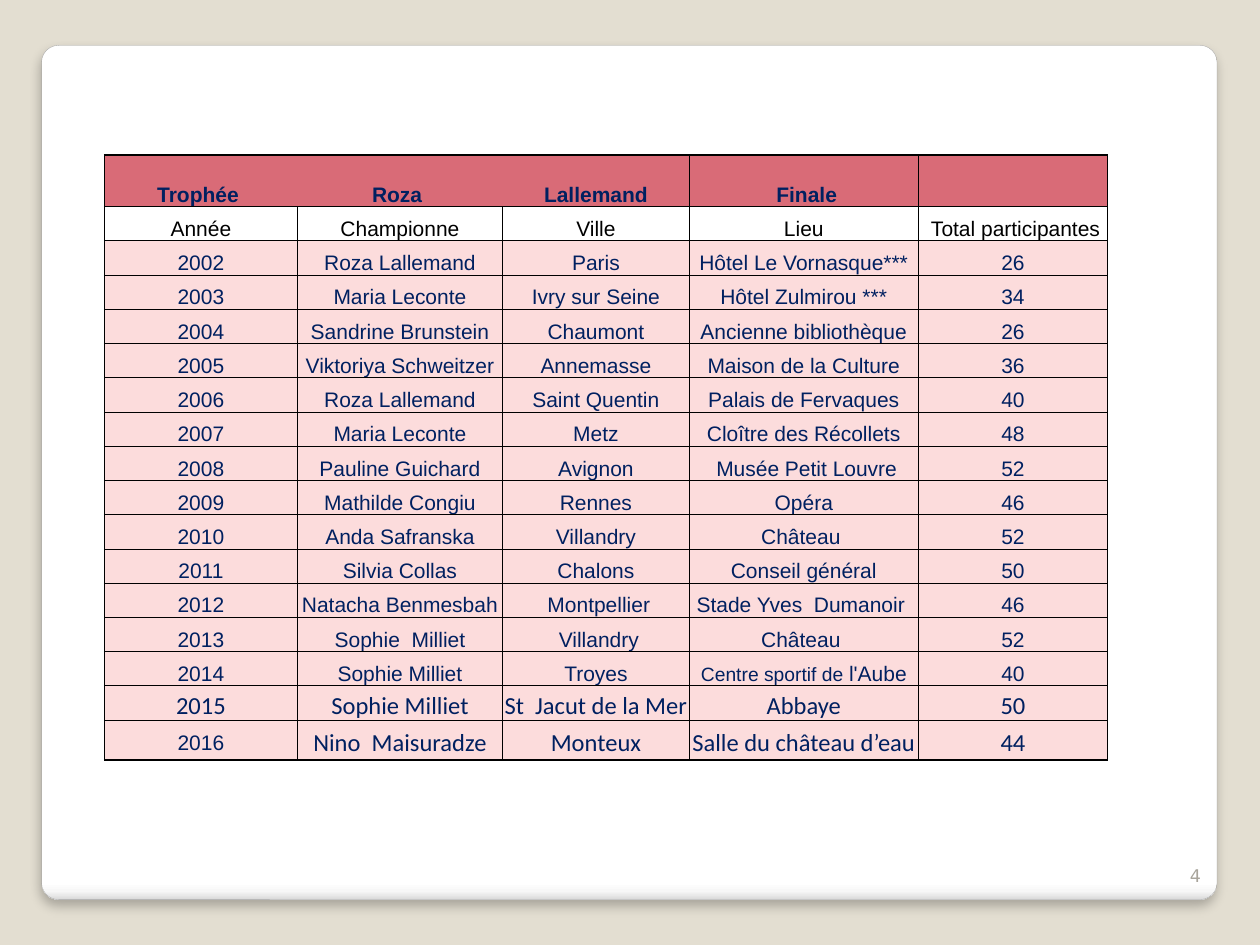
from lxml.etree import SubElement
from pptx import Presentation
from pptx.dml.color import RGBColor
from pptx.enum.shapes import MSO_SHAPE
from pptx.enum.text import MSO_ANCHOR, PP_ALIGN
from pptx.oxml import parse_xml
from pptx.oxml.ns import nsdecls, qn
from pptx.util import Inches, Pt


def colour(hex_value):
    return RGBColor.from_string(hex_value)


def add_border(cell, side, width):
    line = SubElement(cell._tc.get_or_add_tcPr(), qn(f"a:ln{side}"), w=str(Pt(width)))
    if width:
        fill = SubElement(line, qn("a:solidFill"))
        SubElement(fill, qn("a:srgbClr"), val="000000")
    else:
        SubElement(line, qn("a:noFill"))


prs = Presentation()
prs.slide_width, prs.slide_height = Inches(10), Inches(7.5)
slide = prs.slides.add_slide(prs.slide_layouts[6])
slide.background.fill.solid()
slide.background.fill.fore_color.rgb = colour("E3DED1")

panel = slide.shapes.add_shape(
    MSO_SHAPE.ROUNDED_RECTANGLE, Inches(0.33), Inches(0.36), Inches(9.33), Inches(6.78))
panel.adjustments[0] = 0.02
panel.line.color.rgb = colour("A4A4A4")
panel.line.width = Pt(0.16)
panel.fill.gradient()
panel.fill.gradient_angle = 270
stops = panel._element.spPr.find(qn("a:gradFill")).find(qn("a:gsLst"))
for stop in list(stops):
    stops.remove(stop)
for percent, shade in ((0, "FFFFFF"), (98, "FFFFFF"), (99, "F7F7F7"), (100, "DADADA")):
    stop = SubElement(stops, qn("a:gs"), pos=str(percent * 1000))
    SubElement(stop, qn("a:srgbClr"), val=shade)
panel._element.spPr.append(parse_xml(
    f'<a:effectLst {nsdecls("a")}><a:outerShdw blurRad="{Pt(6)}" dist="{Pt(4)}" '
    'dir="5400000" algn="t" rotWithShape="0"><a:srgbClr val="000000">'
    '<a:alpha val="25000"/></a:srgbClr></a:outerShdw></a:effectLst>'))

page_number = slide.shapes.add_textbox(Inches(9.13), Inches(6.68), Inches(0.5), Inches(0.4))
page_number.text_frame.word_wrap = True
page_number.text_frame.vertical_anchor = MSO_ANCHOR.BOTTOM
page_paragraph = page_number.text_frame.paragraphs[0]
page_paragraph.alignment = PP_ALIGN.RIGHT
page_run = page_paragraph.add_run()
page_run.text = "4"
for key, value in {"size": Pt(10), "name": "DejaVu Sans"}.items():
    setattr(page_run.font, key, value)
page_run.font.color.rgb = colour("A8A49B")

finals = [
    ("Trophée ", "Roza ", "Lallemand", " Finale", ""),
    ("Année", "Championne", "Ville", "Lieu", " Total participantes"),
    ("2002", "Roza Lallemand", "Paris", "Hôtel Le Vornasque***", "26"),
    ("2003", "Maria Leconte", "Ivry sur Seine", "Hôtel Zulmirou ***", "34"),
    ("2004", "Sandrine Brunstein", "Chaumont", "Ancienne bibliothèque", "26"),
    ("2005", "Viktoriya Schweitzer", "Annemasse", "Maison de la Culture", "36"),
    ("2006", "Roza Lallemand", "Saint Quentin", "Palais de Fervaques", "40"),
    ("2007", "Maria Leconte", "Metz", "Cloître des Récollets", "48"),
    ("2008", "Pauline Guichard", "Avignon", " Musée Petit Louvre", "52"),
    ("2009", "Mathilde Congiu", "Rennes", "Opéra", "46"),
    ("2010", "Anda Safranska", "Villandry", "Château ", "52"),
    ("2011", "Silvia Collas", "Chalons", "Conseil général", "50"),
    ("2012", "Natacha Benmesbah", " Montpellier", "Stade Yves  Dumanoir ", "46"),
    ("2013", "Sophie  Milliet", " Villandry", "Château ", "52"),
    ("2014", "Sophie Milliet", "Troyes", "Centre sportif de |l'Aube", "40"),
    ("2015", "Sophie Milliet", "St  Jacut de la Mer", "Abbaye", "50"),
    ("2016", "Nino  Maisuradze", "Monteux", "Salle du château d’eau", "44"),
]
column_widths = [1.53, 1.63, 1.48, 1.82, 1.5]
last_row, last_column = len(finals) - 1, len(column_widths) - 1
table_height, header_height, final_height = 4.8, 0.41, 0.31
body_height = (table_height - header_height - final_height) / (last_row - 1)
row_heights = [header_height] + [body_height] * (last_row - 1) + [final_height]

trophy = slide.shapes.add_table(
    len(finals), len(column_widths), Inches(0.83), Inches(1.23),
    Inches(sum(column_widths)), Inches(table_height)).table
trophy.first_row = trophy.horz_banding = False
for column, width in zip(trophy.columns, column_widths):
    column.width = Inches(width)
for row, height in zip(trophy.rows, row_heights):
    row.height = Inches(height)

margins = {"margin_left": Inches(0.01), "margin_right": Inches(0.01),
           "margin_top": Inches(0.01), "margin_bottom": 0}
recent_spacing = {"line_spacing": 1.15, "space_after": Pt(10)}
row_colours = {0: ("D96B77", "002060"), 1: ("FFFFFF", "000000")}

for r, final in enumerate(finals):
    fill_colour, text_colour = row_colours.get(r, ("FCDCDC", "002060"))
    recent = final[0] in ("2015", "2016")
    for c, entry in enumerate(final):
        cell = trophy.cell(r, c)
        for key, value in margins.items():
            setattr(cell, key, value)
        centred = recent and (final[0], c) != ("2015", last_column)
        cell.vertical_anchor = MSO_ANCHOR.MIDDLE if centred else MSO_ANCHOR.BOTTOM
        add_border(cell, "L", 1 if c == 0 else 0 if r == 0 and c < 3 else 0.5)
        add_border(cell, "R", 1 if c == last_column else 0 if r == 0 and c < 2 else 0.5)
        add_border(cell, "T", 1 if r == 0 else 0.5)
        add_border(cell, "B", 1 if r == last_row else 0.5)
        cell.fill.solid()
        cell.fill.fore_color.rgb = colour(fill_colour)

        paragraph = cell.text_frame.paragraphs[0]
        paragraph.alignment = PP_ALIGN.CENTER
        for key, value in (recent_spacing if recent else {}).items():
            setattr(paragraph, key, value)
        calibri = recent and entry != "2016"
        lettering = {"name": "Calibri" if calibri else "Arial",
                     "size": Pt(14 if calibri else 12), "bold": r == 0}
        for part in entry.split("|") if entry else []:
            run = paragraph.add_run()
            run.text = part
            for key, value in lettering.items():
                setattr(run.font, key, value)
            run.font.color.rgb = colour(text_colour)
            if part.startswith("Centre sportif"):
                run.font.size = Pt(11)

prs.save("out.pptx")
